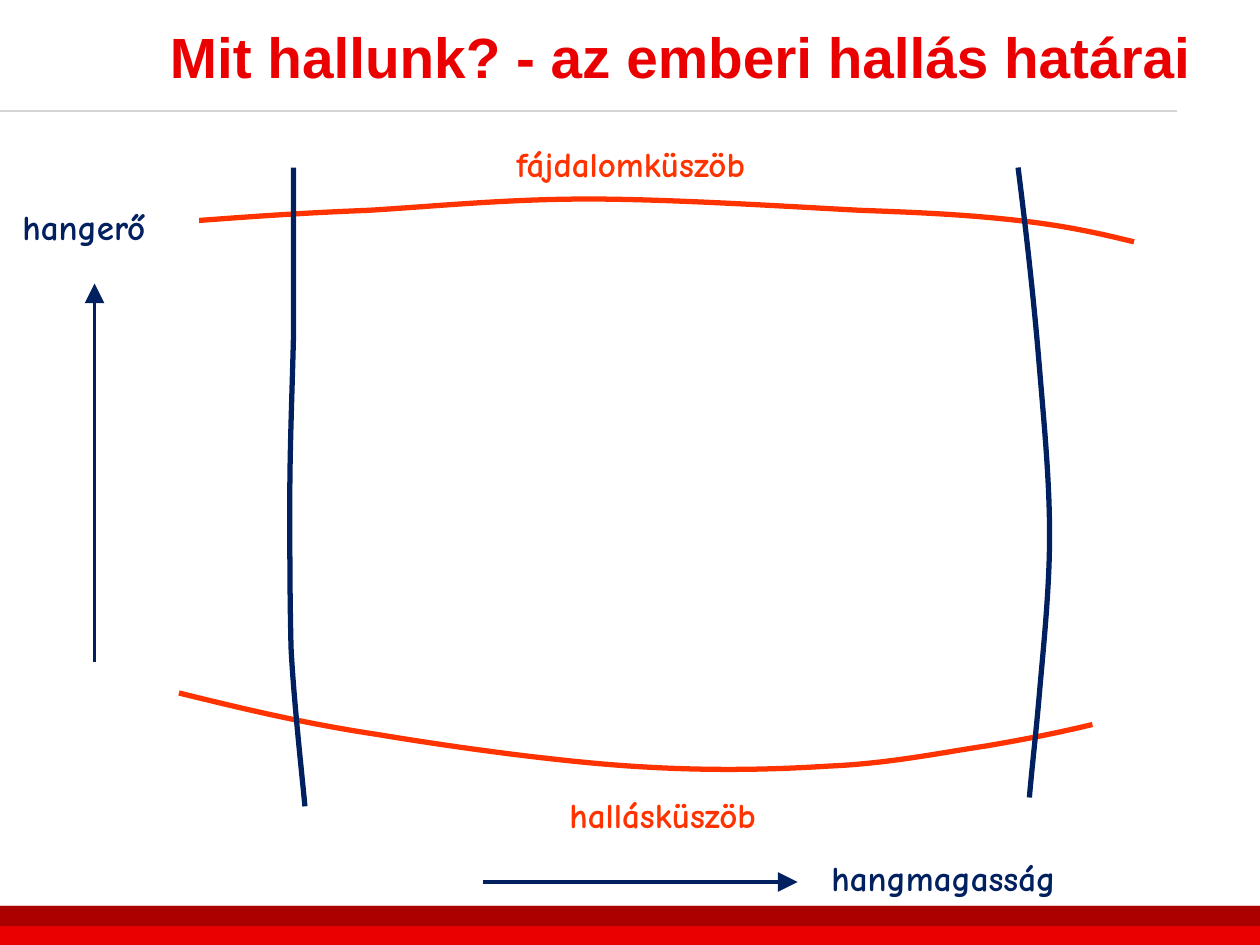
from pptx import Presentation
from pptx.dml.color import RGBColor
from pptx.enum.shapes import MSO_CONNECTOR, MSO_SHAPE
from pptx.enum.text import MSO_ANCHOR, PP_ALIGN
from pptx.oxml.ns import qn
from pptx.util import Inches, Pt
from lxml import etree

RECTANGLE = MSO_SHAPE.RECTANGLE
STRAIGHT = MSO_CONNECTOR.STRAIGHT
TOP, MIDDLE = MSO_ANCHOR.TOP, MSO_ANCHOR.MIDDLE
LEFT = PP_ALIGN.LEFT

RED = RGBColor(0xEA, 0x00, 0x00)
DARK_RED = RGBColor(0xAA, 0x00, 0x00)
GREY = RGBColor(0xD4, 0xD4, 0xD4)
ORANGE = RGBColor(0xFF, 0x33, 0x00)
NAVY = RGBColor(0x00, 0x20, 0x60)

TITLE = "Mit hallunk? - az emberi hallás határai"
FOOTER_BANDS = [(0.31, RED), (0.16, DARK_RED)]  # height, colour
FOOTER_TOP = 7.19

# text, left, top, width, colour
LABELS = [
    ("hallásküszöb", 4.42, 6.25, 2.58, ORANGE),
    ("fájdalomküszöb", 4, 1.08, 2.58, ORANGE),
    ("hangerő", 0.08, 1.58, 2.33, NAVY),
    ("hangmagasság", 6.5, 6.75, 2.33, NAVY),
]
AXES = [((0.75, 5.25), (0.75, 2.25)), ((3.83, 7), (6.33, 7))]

# Bezier chains: start point, then two control points and an end per segment
HEARING_THRESHOLD = [
    (1.42, 5.5), (1.91, 5.62), (2.4, 5.74), (3, 5.83),
    (3.6, 5.93), (4.4, 6.04), (5, 6.08),
    (5.6, 6.12), (6.11, 6.11), (6.58, 6.08),
    (7.06, 6.06), (7.49, 5.97), (7.83, 5.92),
    (8.18, 5.86), (8.42, 5.81), (8.67, 5.75)]
PAIN_THRESHOLD = [
    (1.58, 1.75), (1.99, 1.72), (2.4, 1.69), (2.92, 1.67),
    (3.43, 1.64), (4.01, 1.58), (4.67, 1.58),
    (5.32, 1.58), (6.26, 1.64), (6.83, 1.67),
    (7.4, 1.69), (7.72, 1.71), (8.08, 1.75),
    (8.44, 1.79), (8.72, 1.85), (9, 1.92)]
LOWEST_PITCH = [
    (2.33, 1.33), (2.33, 1.77), (2.33, 2.2), (2.33, 2.64),
    (2.32, 3.08), (2.3, 3.55), (2.3, 3.96),
    (2.3, 4.38), (2.3, 4.73), (2.31, 5.14),
    (2.33, 5.55), (2.4, 6.18), (2.42, 6.4)]
HIGHEST_PITCH = [
    (8.08, 1.33), (8.15, 1.88), (8.21, 2.43), (8.25, 2.92),
    (8.29, 3.4), (8.33, 3.82), (8.33, 4.25),
    (8.33, 4.68), (8.28, 5.15), (8.25, 5.5),
    (8.22, 5.85), (8.19, 6.09), (8.17, 6.33)]
THRESHOLDS = [HEARING_THRESHOLD, PAIN_THRESHOLD]
PITCH_LIMITS = [LOWEST_PITCH, HIGHEST_PITCH]


def add_text(slide, text, left, top, width, height, *, font, size, color, anchor=TOP):
    box = slide.shapes.add_textbox(*map(Inches, (left, top, width, height)))
    frame = box.text_frame
    frame.word_wrap = True
    frame.vertical_anchor = anchor
    paragraph = frame.paragraphs[0]
    paragraph.alignment = LEFT
    run = paragraph.add_run()
    run.text = text
    run.font.name = font
    run.font.size = Pt(size)
    run.font.bold = True
    run.font.color.rgb = color


def add_line(slide, start, end, color, width, arrow=False):
    line = slide.shapes.add_connector(STRAIGHT, *map(Inches, (*start, *end)))
    line.line.color.rgb = color
    line.line.width = Pt(width)
    if arrow:
        outline = line._element.spPr.find(qn("a:ln"))
        etree.SubElement(outline, qn("a:tailEnd"), type="triangle", w="lg", len="lg")
    etree.SubElement(line._element.spPr, qn("a:effectLst"))


def add_curve(slide, chain, color):
    """Draw a Bezier chain: a polyline whose points are regrouped in threes."""
    start, *rest = [tuple(map(Inches, point)) for point in chain]
    builder = slide.shapes.build_freeform(*start)
    builder.add_line_segments(rest, close=False)
    curve = builder.convert_to_shape()
    segments = list(curve._element.iter(qn("a:lnTo")))
    outline = segments[0].getparent()
    for i in range(0, len(segments), 3):
        bezier = etree.SubElement(outline, qn("a:cubicBezTo"))
        for segment in segments[i:i + 3]:
            bezier.append(segment[0])
            outline.remove(segment)
    curve.fill.background()
    curve.line.color.rgb = color
    curve.line.width = Pt(3)
    curve.shadow.inherit = False


def main():
    prs = Presentation()
    prs.slide_width, prs.slide_height = Inches(10), Inches(7.5)
    slide = prs.slides.add_slide(prs.slide_layouts[6])

    for height, color in FOOTER_BANDS:
        band = slide.shapes.add_shape(
            RECTANGLE, *map(Inches, (0, FOOTER_TOP, 10, height)))
        band.fill.solid()
        band.fill.fore_color.rgb = color
        band.line.fill.background()
        band.shadow.inherit = False

    add_line(slide, (0, 0.88), (9.34, 0.88), GREY, 1.5)
    add_text(slide, TITLE, 1.25, 0.14, 8.41, 0.61,
             font="Arial", size=32.4, color=RED, anchor=MIDDLE)
    for chain in THRESHOLDS:
        add_curve(slide, chain, ORANGE)
    for start, end in AXES:
        add_line(slide, start, end, NAVY, 2.25, arrow=True)
    for text, left, top, width, color in LABELS:
        add_text(slide, text, left, top, width, 0.43,
                 font="Comic Neue", size=20, color=color)
    for chain in PITCH_LIMITS:
        add_curve(slide, chain, NAVY)

    prs.save("out.pptx")


if __name__ == "__main__":
    main()
